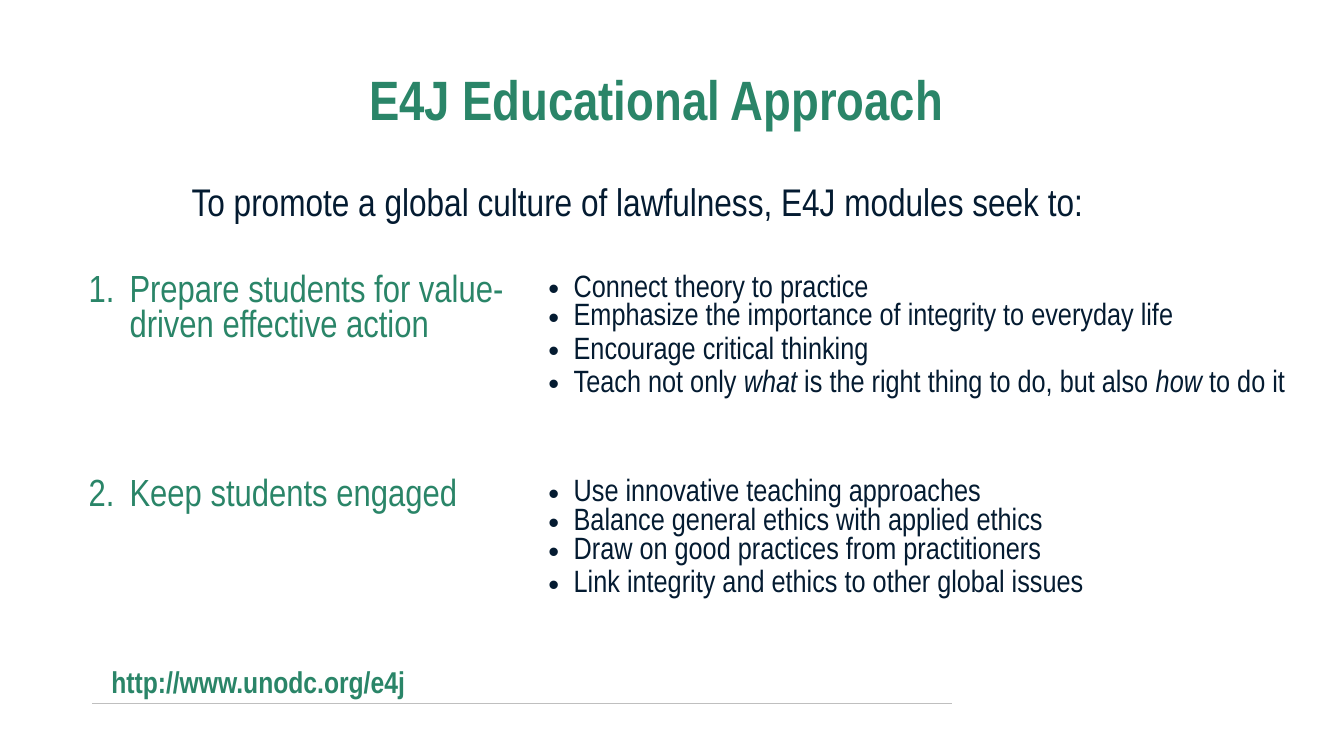
from lxml.etree import SubElement
from pptx import Presentation
from pptx.dml.color import RGBColor
from pptx.enum.shapes import MSO_CONNECTOR
from pptx.enum.text import PP_ALIGN
from pptx.oxml.ns import qn
from pptx.util import Inches, Pt

GREEN = RGBColor(0x2A, 0x85, 0x68)
NAVY = RGBColor(0x04, 0x1B, 0x31)
GREY = RGBColor(0xBF, 0xBF, 0xBF)

TITLE = {"size": Pt(79.2), "bold": True, "color": GREEN}
INTRODUCTION = {"size": Pt(55), "color": NAVY}
GOAL = {"size": Pt(54), "color": GREEN}
METHOD = {"size": Pt(44), "color": NAVY}
ADDRESS = {"size": Pt(43), "bold": True, "color": GREEN}

GOALS = [
    (
        "Prepare students for value-driven effective action",
        [
            ["Connect theory to practice"],
            ["Emphasize the importance of integrity to everyday life"],
            ["Encourage critical thinking"],
            ["Teach not only ", "what", " is the right thing to do, but also ", "how", " to do it"],
        ],
        1,
    ),
    (
        "Keep students engaged",
        [
            ["Use innovative teaching approaches"],
            ["Balance general ethics with applied ethics"],
            ["Draw on good practices from practitioners"],
            ["Link integrity and ethics to other global issues"],
        ],
        2,
    ),
]


def add_run(paragraph, text, style, italic=False):
    run = paragraph.add_run()
    run.text = text
    run.font.name = "Arial Narrow"
    for name, value in style.items():
        if name == "color":
            run.font.color.rgb = value
        else:
            setattr(run.font, name, value)
    if italic:
        run.font.italic = True


def add_text(slide, box, margins, text, style, layout):
    frame = slide.shapes.add_textbox(*map(Inches, box)).text_frame
    frame.word_wrap = True
    sides = ("margin_left", "margin_top", "margin_right", "margin_bottom")
    for side, margin in zip(sides, margins):
        setattr(frame, side, Inches(margin))
    paragraph = frame.paragraphs[0]
    for name, value in layout.items():
        setattr(paragraph, name, value)
    add_run(paragraph, text, style)


def add_marker(paragraph, indent, tag, **attributes):
    properties = paragraph._p.get_or_add_pPr()
    properties.set("marL", str(Inches(indent)))
    properties.set("indent", str(-Inches(indent)))
    SubElement(properties, qn("a:buFont"), typeface="Arial" if tag == "a:buChar" else "+mj-lt")
    SubElement(properties, qn(tag), **attributes)


def fill_goal(cell, text, number):
    paragraph = cell.text_frame.paragraphs[0]
    add_marker(paragraph, 0.81, "a:buAutoNum", type="arabicPeriod", startAt=str(number))
    add_run(paragraph, text, GOAL)


def fill_methods(cell, methods, first_spaced):
    frame = cell.text_frame
    for index, pieces in enumerate(methods):
        paragraph = frame.paragraphs[0] if index == 0 else frame.add_paragraph()
        add_marker(paragraph, 0.5, "a:buChar", char="•")
        if index >= first_spaced:
            paragraph.space_after = Pt(6)
        for position, piece in enumerate(pieces):
            add_run(paragraph, piece, METHOD, italic=position % 2 == 1)


def add_goals(slide, box):
    table = slide.shapes.add_table(len(GOALS), 2, *map(Inches, box)).table
    for name in ("first_row", "horz_banding"):
        setattr(table, name, False)
    for column, width in zip(table.columns, (9.12, 15.26)):
        column.width = Inches(width)
    for row, height in zip(table.rows, (4.06, 3.2)):
        row.height = Inches(height)
    for index, (goal, methods, first_spaced) in enumerate(GOALS):
        goal_cell, methods_cell = table.rows[index].cells
        for cell in (goal_cell, methods_cell):
            cell.fill.background()
        fill_goal(goal_cell, goal, index + 1)
        fill_methods(methods_cell, methods, first_spaced)


def add_footer(slide, box):
    left, top, width, height = box
    rule = slide.shapes.add_connector(
        MSO_CONNECTOR.STRAIGHT, *map(Inches, (left, top + height, left + width, top + height))
    )
    rule.line.color.rgb = GREY
    rule.line.width = Pt(2.25)
    SubElement(rule._element.spPr, qn("a:effectLst"))
    add_text(slide, (left + 0.28, top, 9.95, 0.82), (0.1, 0.2, 0.1, 0.05),
             "http://www.unodc.org/e4j", ADDRESS, {})


def main():
    presentation = Presentation()
    presentation.slide_width = Inches(26.66)
    presentation.slide_height = Inches(15)
    slide = presentation.slides.add_slide(presentation.slide_layouts[6])
    add_text(slide, (1.73, 1.37, 22.86, 1.64), (0.22, 0.07, 0.5, 0.11),
             "E4J Educational Approach", TITLE,
             {"alignment": PP_ALIGN.CENTER, "line_spacing": 0.9})
    add_text(slide, (3.58, 3.35, 18.75, 2.55), (0.22, 0.28, 0.22, 0.11),
             "To promote a global culture of lawfulness, E4J modules seek to:",
             INTRODUCTION, {"line_spacing": 0.9})
    add_goals(slide, (1.66, 5.4, 24.38, 7.26))
    add_footer(slide, (1.83, 12.96, 17.05, 1))
    presentation.save("out.pptx")


if __name__ == "__main__":
    main()
